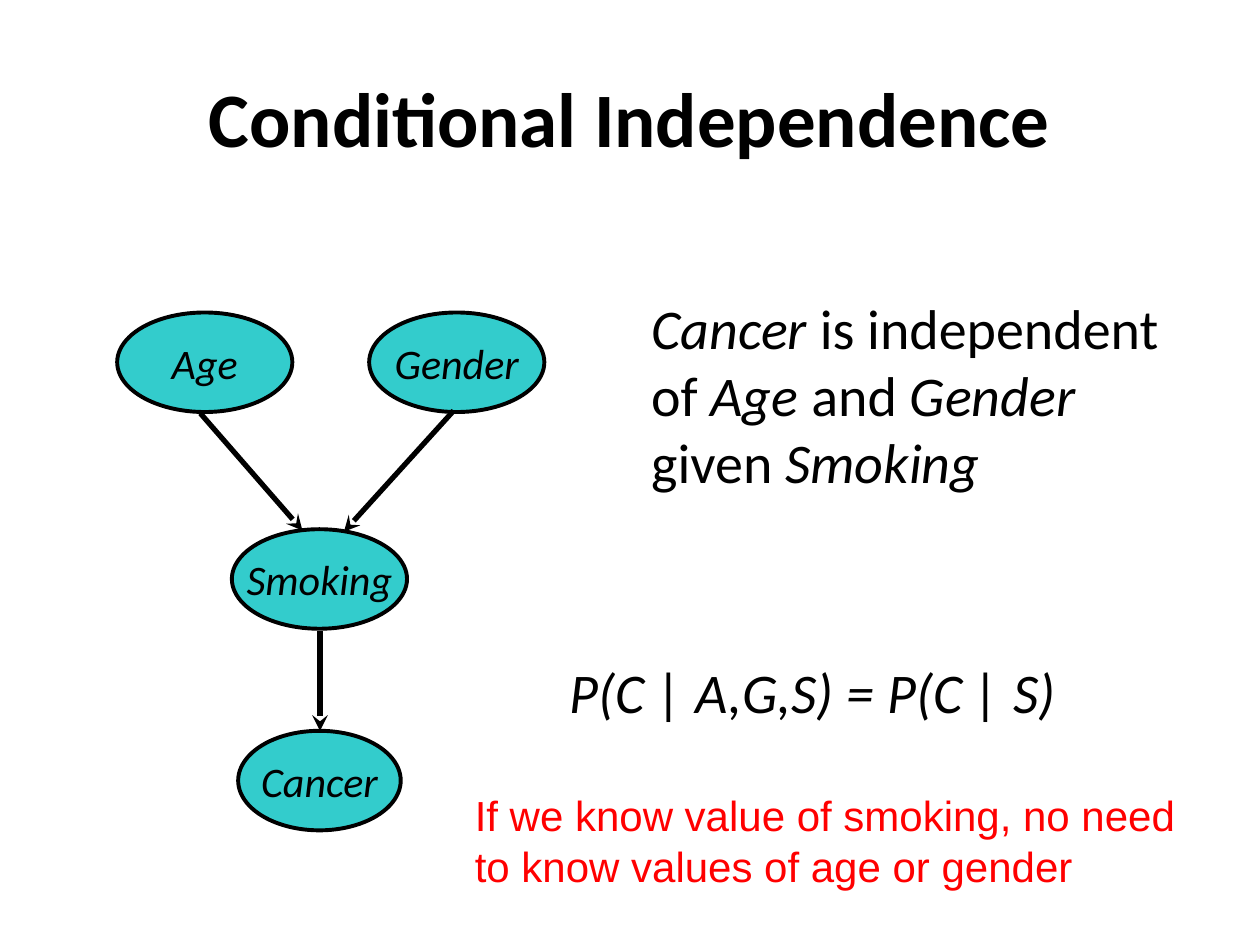
from pptx import Presentation
from pptx.dml.color import RGBColor as RGB
from pptx.enum.shapes import MSO_CONNECTOR as Link, MSO_SHAPE as Shape
from pptx.enum.text import MSO_ANCHOR as Anchor, MSO_AUTO_SIZE as Fit, PP_ALIGN as Align
from pptx.oxml.ns import qn
from pptx.util import Inches, Pt
from lxml.etree import SubElement as Sub

TITLE = "Conditional Independence"
NODES = [
    ("Smoking", 1.84, 4.2, 1.39),
    ("Gender", 2.93, 2.48, 1.39),
    ("Age", 0.93, 2.48, 1.39),
    ("Cancer", 1.89, 5.8, 1.29),
]
TALL = 0.79
EDGES = [
    (3.6, 3.26, 2.73, 4.22),
    (1.59, 3.28, 2.4, 4.21),
    (2.54, 5.01, 2.54, 5.8),
]
CLAIM = [
    ("Cancer", True), (" is independent of ", False), ("Age", True),
    (" and ", False), ("Gender", True), (" given ", False), ("Smoking", True),
]
RULE = [("P(C | A,G,S) = P(C | S)", True)]
HINT = [("If we know value of smoking, no need to know values of age or gender", False)]

THEME = {
    "ink": RGB(0, 0, 0), "node": RGB(0x33, 0xCC, 0xCC), "hint": RGB(0xFF, 0, 0),
    "main": "Calibri", "side": "Arial",
    "title": 44, "body": 32, "small": 24,
    "rim": 2.25, "edge": 3,
}
NOTES = [
    (CLAIM, (5.07, 2.28, 4.39, 1.72), True, "main", "body", "ink"),
    (RULE, (4.42, 5.17, 4.12, 0.64), False, "main", "body", "ink"),
    (HINT, (3.67, 6.22, 5.96, 0.91), True, "side", "small", "hint"),
]


def style(para, face, size, tint="ink"):
    font = para.font
    font.name, font.size = THEME[face], Pt(THEME[size])
    font.color.rgb = THEME[tint]
    return font


def add_title(slide):
    box = slide.shapes.title
    box.left, box.top, box.width, box.height = map(Inches, (0.5, 0.3, 9, 1.25))
    frame = box.text_frame
    frame.text, frame.vertical_anchor = TITLE, Anchor.MIDDLE
    para = frame.paragraphs[0]
    para.alignment = Align.CENTER
    style(para, "main", "title").bold = True


def add_node(slide, name, left, top, wide):
    node = slide.shapes.add_shape(Shape.OVAL, *map(Inches, (left, top, wide, TALL)))
    node.shadow.inherit = False
    node.fill.solid()
    node.fill.fore_color.rgb = THEME["node"]
    node.line.color.rgb = THEME["ink"]
    node.line.width = Pt(THEME["rim"])
    frame = node.text_frame
    frame.text, frame.word_wrap = name, False
    frame.vertical_anchor = Anchor.MIDDLE
    para = frame.paragraphs[0]
    para.alignment = Align.CENTER
    style(para, "main", "small").italic = True


def add_edge(slide, ends):
    edge = slide.shapes.add_connector(Link.STRAIGHT, *map(Inches, ends))
    edge.line.color.rgb = THEME["ink"]
    edge.line.width = Pt(THEME["edge"])
    Sub(edge.line._get_or_add_ln(), qn("a:tailEnd"), type="stealth")
    Sub(edge._element.spPr, qn("a:effectLst"))


def add_note(slide, runs, area, wrap, face, size, tint):
    frame = slide.shapes.add_textbox(*map(Inches, area)).text_frame
    frame.word_wrap, frame.auto_size = wrap, Fit.SHAPE_TO_FIT_TEXT
    para = frame.paragraphs[0]
    style(para, face, size, tint)
    for text, slant in runs:
        run = para.add_run()
        run.text, run.font.italic = text, slant


def main():
    deck = Presentation()
    deck.slide_width, deck.slide_height = Inches(10), Inches(7.5)
    slide = deck.slides.add_slide(deck.slide_layouts[5])
    add_title(slide)
    for node in NODES:
        add_node(slide, *node)
    for ends in EDGES:
        add_edge(slide, ends)
    for note in NOTES:
        add_note(slide, *note)
    deck.save("out.pptx")


if __name__ == "__main__":
    main()
